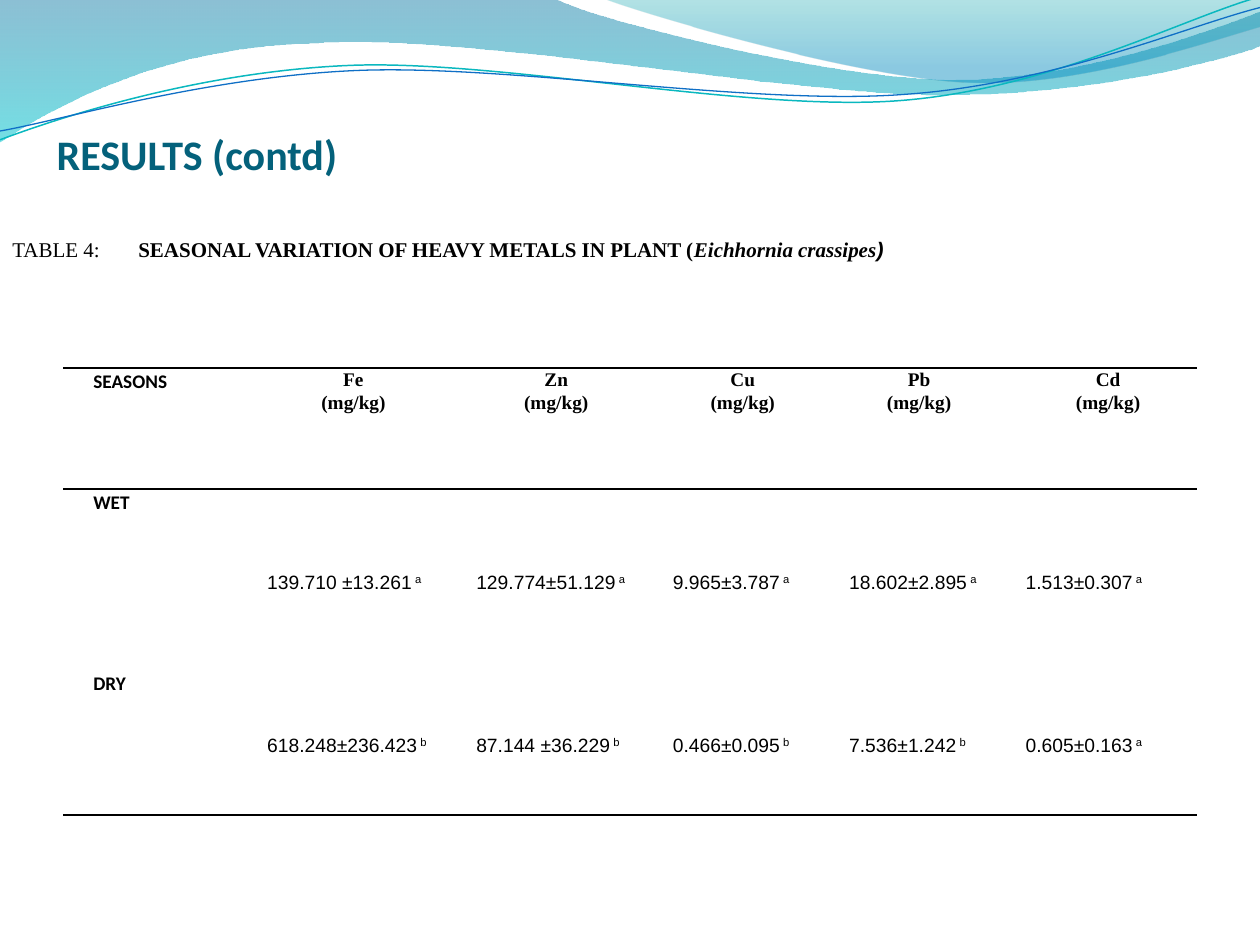
from pptx import Presentation
from pptx.dml.color import RGBColor
from pptx.enum.text import MSO_ANCHOR, PP_ALIGN
from pptx.oxml import parse_xml
from pptx.oxml.ns import nsdecls, qn
from pptx.util import Inches, Pt
from lxml.etree import SubElement

INK = {"title": "04617B", "text": "000000", "teal": "0AB8BF", "blue": "0F6FC6",
       "deep": "0074A1", "aqua": "00C6CF", "sea": "00A1A9", "sky": "008BBF"}

WAVES = [
    ([(0, 0), (4.4, -.01),
      (4.76, .17, 6.64, .63, 7.58, .63), (8.53, .63, 9.58, .26, 10, .09),
      (10.01, .36), (9.83, .44, 8.7, .76, 7.46, .75),
      (6.22, .75, 3.82, .28, 2.57, .34), (1.29, .36, .46, .83, -.01, 1.13)],
     [(0, "deep", 45), (1, "aqua", 55)]),
    ([(4.79, -.01), (5.09, .11, 6.82, .62, 7.69, .65),
      (8.56, .69, 9.61, .32, 10, .21), (10, 0)],
     [(0, "sea", 30), (.8, "sky", 45)]),
]
CURVES = [
    ([(0, 1.11), (.48, .93, 1.58, .57, 2.77, .52),
      (3.95, .47, 5.93, .89, 7.13, .8), (8.33, .71, 9.38, .15, 9.98, -.02)], "teal", .85),
    ([(0, 1.04), (.47, .96, 1.64, .61, 2.83, .56),
      (4.03, .51, 5.97, .84, 7.17, .75), (8.36, .67, 9.41, .21, 10, .06)], "blue", .75),
]

TITLE = "RESULTS (contd)"
CAPTION = [("TABLE 4: ", "Times New Roman", 12, False, False),
           ("\t", "Arial", 11, False, False),
           ("SEASONAL VARIATION OF HEAVY METALS IN PLANT (", "Times New Roman", 12, True, False),
           ("Eichhornia crassipes", "Times New Roman", 12, True, True),
           (")", "Arial", 12, True, True)]
METALS = ["Fe", "Zn", "Cu", "Pb", "Cd"]
UNIT = "(mg/kg)"
SEASONS = [
    ("WET", [("139.710 ±13.261", "a"), ("129.774±51.129", "a"), ("9.965±3.787", "a"),
             ("18.602±2.895", "a"), ("1.513±0.307", "a")]),
    ("DRY", [("618.248±236.423", "b"), ("87.144 ±36.229", "b"), ("0.466±0.095", "b"),
             ("7.536±1.242", "b"), ("0.605±0.163", "a")]),
]
WIDTHS = [1.38, 1.66, 1.56, 1.4, 1.4, 1.6]
HEIGHTS = [.96, 1.44, 1.15]
RULES = ["TB", "T", "B"]
PLAIN = "{2D5ABB26-0587-4C30-8999-92F81FD0307C}"


def color(name):
    return RGBColor.from_string(INK[name])


def outline(slide, path, close):
    first, *rest = path
    pen = slide.shapes.build_freeform(*map(Inches, first))
    pen.add_line_segments([tuple(map(Inches, part[-2:])) for part in rest], close=close)
    shape = pen.convert_to_shape()
    shape.shadow.inherit = False
    legs = list(shape._element.iter(qn("a:lnTo")))
    for leg, part in zip(legs, rest):
        if len(part) == 6:
            leg.tag = qn("a:cubicBezTo")
            leg.clear()
            for x, y in zip(part[::2], part[1::2]):
                spot = SubElement(leg, qn("a:pt"))
                spot.set("x", str(Inches(x) - shape.left))
                spot.set("y", str(Inches(y) - shape.top))
    return shape


def wave(slide, path, stops):
    shape = outline(slide, path, True)
    shape.line.fill.background()
    shape.fill.gradient()
    shape.fill.gradient_angle = 270
    for stop, (place, name, _) in zip(shape.fill.gradient_stops, stops):
        stop.position = place
        stop.color.rgb = color(name)
    tints = shape._element.spPr.find(qn("a:gradFill")).iter(qn("a:srgbClr"))
    for tint, (_, _, alpha) in zip(tints, stops):
        SubElement(tint, qn("a:alpha")).set("val", str(alpha * 1000))


def curve(slide, path, name, width):
    shape = outline(slide, path, False)
    shape.fill.background()
    shape.line.color.rgb = color(name)
    shape.line.width = Pt(width)


def style(font, face, size, bold=False, italic=False, name="text"):
    font.name, font.size, font.bold, font.italic = face, Pt(size), bold, italic
    font.color.rgb = color(name)


def box(slide, place, anchor, wrap):
    frame = slide.shapes.add_textbox(*map(Inches, place)).text_frame
    frame.word_wrap = wrap
    frame.vertical_anchor = anchor
    return frame


def rule(cell, sides):
    cell.fill.background()
    solid = f'<a:solidFill><a:srgbClr val="{INK["text"]}"/></a:solidFill>'
    for spot, side in enumerate("LRTB"):
        paint = solid if side in sides else "<a:noFill/>"
        cell._tc.tcPr.insert(spot, parse_xml(
            f'<a:ln{side} {nsdecls("a")} w="12700">{paint}</a:ln{side}>'))


def write(cell, lines, face, bold, align=PP_ALIGN.LEFT, gap=1.07):
    cell.text = "\n".join(lines)
    for para in cell.text_frame.paragraphs:
        para.alignment, para.line_spacing = align, gap
        para._p.get_or_add_pPr().set("marL", str(Inches(.19)))
        para._p.get_or_add_pPr().set("indent", "0")
        style(para.font, face, 11, bold)


def grid(slide):
    rows, cols = len(HEIGHTS), len(WIDTHS)
    table = slide.shapes.add_table(rows, cols, Inches(.5), Inches(2.92),
                                   Inches(sum(WIDTHS)), Inches(sum(HEIGHTS))).table
    table.first_row = table.horz_banding = False
    table._tbl.tblPr.find(qn("a:tableStyleId")).text = PLAIN
    for col, width in zip(table.columns, WIDTHS):
        col.width = Inches(width)
    for row, height, sides in zip(table.rows, HEIGHTS, RULES):
        row.height = Inches(height)
        for cell in row.cells:
            cell.margin_left = cell.margin_right = Inches(.05)
            cell.margin_top = cell.margin_bottom = 0
            rule(cell, sides)
    write(table.cell(0, 0), ["SEASONS"], "Calibri", True)
    for c, metal in enumerate(METALS, 1):
        write(table.cell(0, c), [metal, UNIT], "Times New Roman", True, PP_ALIGN.CENTER)
    for r, (season, values) in enumerate(SEASONS, 1):
        write(table.cell(r, 0), [season], "Calibri", True)
        for c, (value, mark) in enumerate(values, 1):
            cell = table.cell(r, c)
            cell.vertical_anchor = MSO_ANCHOR.MIDDLE
            write(cell, [value], "Arial", False, gap=Pt(16))
            run = cell.text_frame.paragraphs[0].add_run()
            run.text = " " + mark
            run.font._element.set("baseline", "30000")


def main():
    deck = Presentation()
    deck.slide_width, deck.slide_height = Inches(10), Inches(7.5)
    slide = deck.slides.add_slide(deck.slide_layouts[6])
    for path, stops in WAVES:
        wave(slide, path, stops)
    for path, name, width in CURVES:
        curve(slide, path, name, width)

    frame = box(slide, (0, .5, 9.72, .92), MSO_ANCHOR.BOTTOM, True)
    frame.margin_left, frame.margin_right, frame.margin_bottom = Inches(.45), 0, 0
    frame.text = TITLE
    style(frame.paragraphs[0].font, "Calibri", 24, True, name="title")

    grid(slide)

    frame = box(slide, (0, 1.83, 7.13, .61), MSO_ANCHOR.TOP, False)
    for text, *look in CAPTION:
        run = frame.paragraphs[0].add_run()
        run.text = text
        style(run.font, *look)
    deck.save("out.pptx")


if __name__ == "__main__":
    main()
